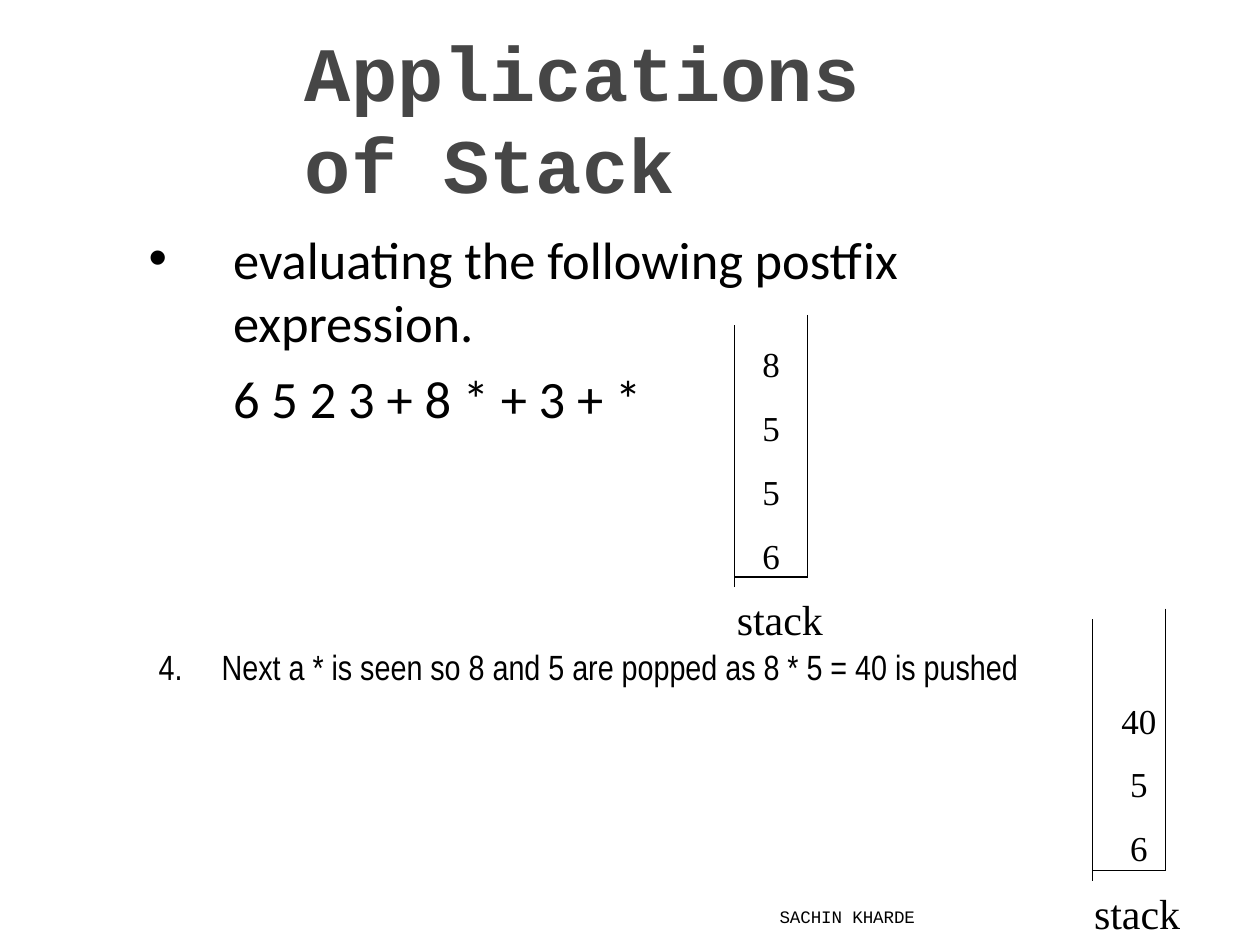
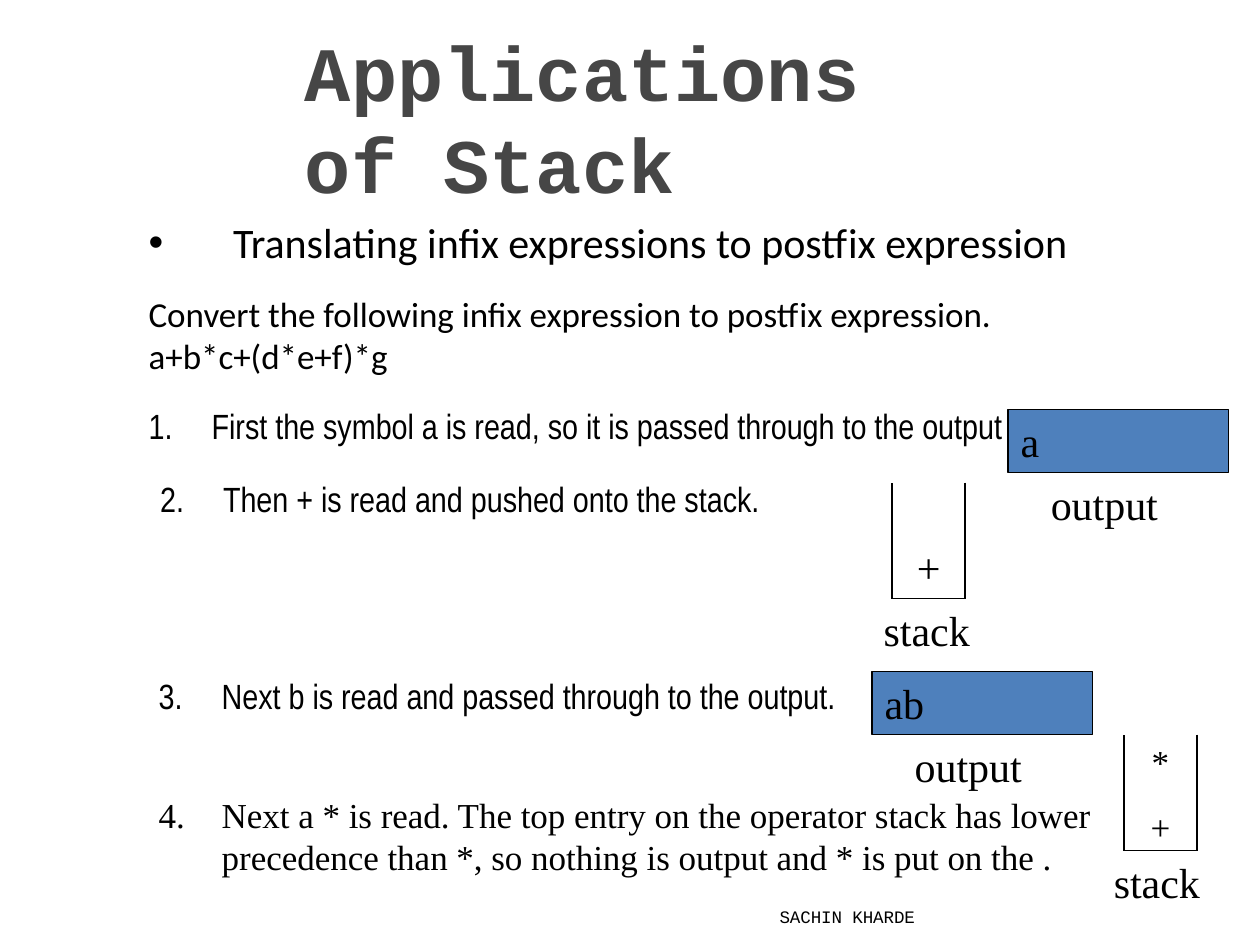
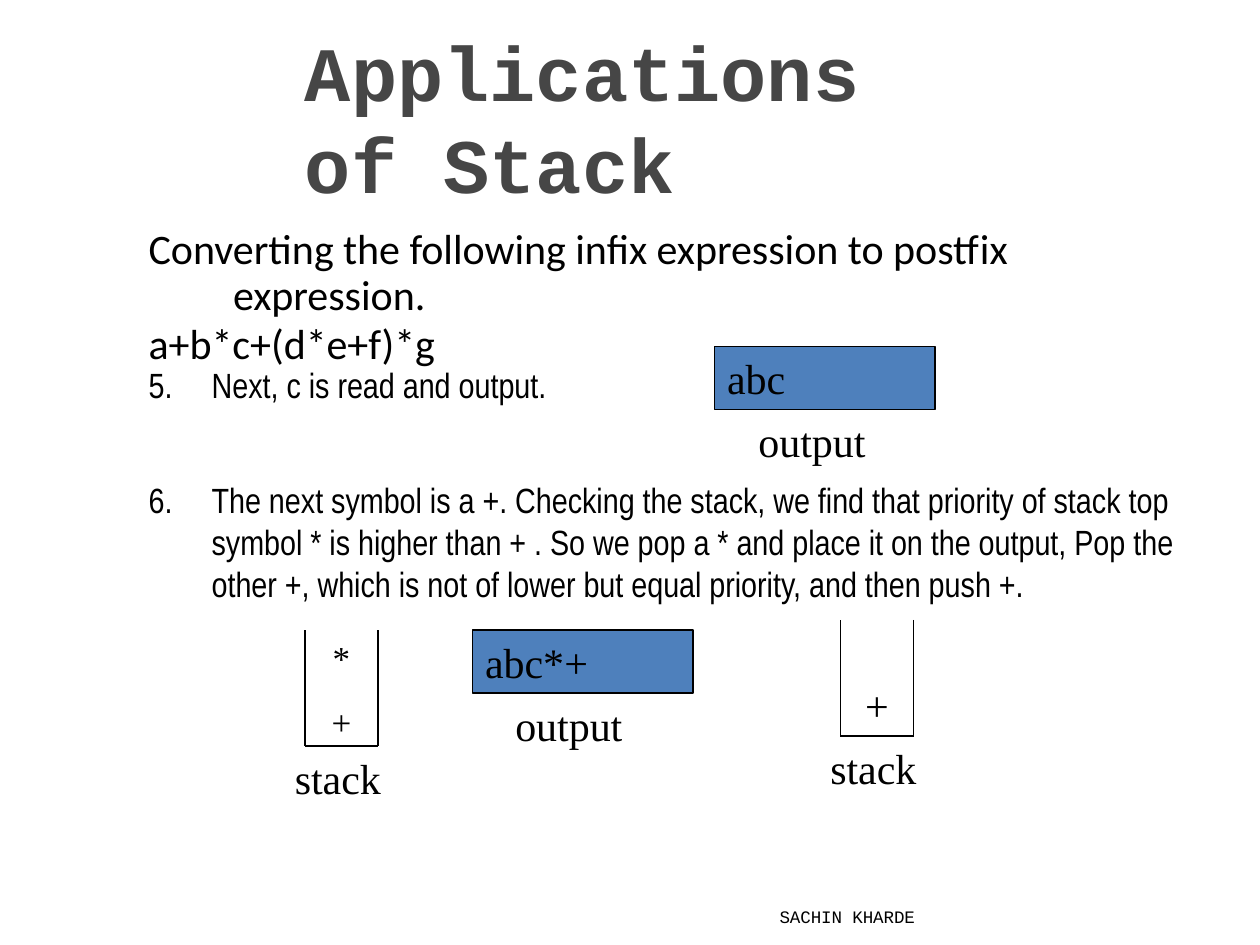
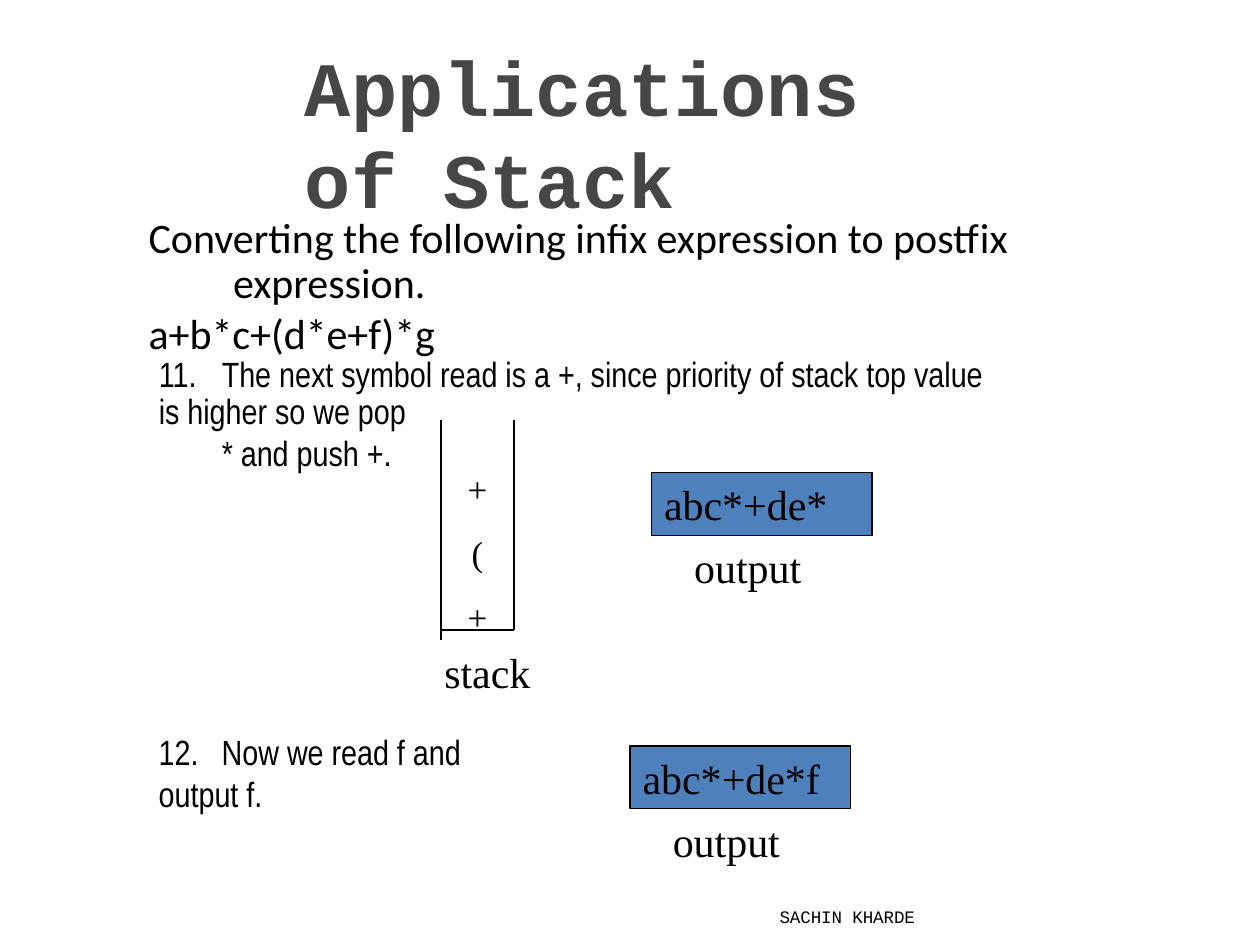
from dataclasses import dataclass
from typing import Optional

from lxml import etree
from pptx import Presentation
from pptx.dml.color import RGBColor
from pptx.enum.shapes import MSO_SHAPE
from pptx.enum.text import MSO_ANCHOR, MSO_AUTO_SIZE, PP_ALIGN
from pptx.oxml.ns import qn
from pptx.slide import Slide
from pptx.text.text import TextFrame
from pptx.util import Inches, Pt

LEFT, CENTER, RIGHT = PP_ALIGN.LEFT, PP_ALIGN.CENTER, PP_ALIGN.RIGHT
TOP, MIDDLE, BOTTOM = MSO_ANCHOR.TOP, MSO_ANCHOR.MIDDLE, MSO_ANCHOR.BOTTOM
FIT_SHAPE, FIXED_SIZE = MSO_AUTO_SIZE.SHAPE_TO_FIT_TEXT, MSO_AUTO_SIZE.NONE
RECTANGLE = MSO_SHAPE.RECTANGLE


@dataclass(frozen=True)
class Theme:
    ink: RGBColor = RGBColor(0x00, 0x00, 0x00)
    title: RGBColor = RGBColor(0x46, 0x46, 0x46)
    output: RGBColor = RGBColor(0x4E, 0x80, 0xBC)
    mono: str = "Courier New"
    body: str = "Calibri"
    step: str = "Arial Narrow"
    diagram: str = "Times New Roman"
    bullet: str = "Arial"
    title_size: float = 44
    lead_size: float = 30
    large: float = 24
    small: float = 20
    footer_size: float = 10
    line_width: float = 0.75
    tracking: int = -3


THEME = Theme()
EXPRESSION = "a+b*c+(d*e+f)*g"
CONVERTING = "Converting the following infix expression to postfix expression."


@dataclass(frozen=True)
class Box:
    left: float
    top: float
    width: float
    height: float


@dataclass(frozen=True)
class Stack:
    left: float
    top: float
    depth: float
    wall_start: float = 0
    wall_overhang: float = 0
    symbols: tuple[str, ...] = ()
    rise: float = 0.37
    size: float = THEME.small
    caption: bool = False


@dataclass(frozen=True)
class Output:
    left: float
    top: float
    text: str
    caption: bool = True


STACK_WIDTH = 0.58
SYMBOL_PITCH = 0.51
OUTPUT_WIDTH, OUTPUT_HEIGHT = 1.75, 0.5


def add_paragraph(frame: TextFrame, text: str, *, font: str = THEME.step,
                  size: float = THEME.small, color: RGBColor = THEME.ink,
                  bold: bool = False, align: PP_ALIGN = LEFT,
                  indent: float = 0.01, hanging: float = 0, right: float = 0,
                  before: float = 0, line: Optional[float] = None,
                  tab: Optional[float] = None, number: Optional[int] = None) -> None:
    first = frame.paragraphs[0]
    paragraph = frame.add_paragraph() if first.runs else first
    paragraph.alignment = align
    paragraph.space_before = Pt(before)
    if line:
        paragraph.line_spacing = Pt(line)
    properties = paragraph._p.get_or_add_pPr()
    properties.set("marL", str(Inches(indent)))
    properties.set("indent", str(Inches(-hanging)))
    properties.set("marR", str(Inches(right)))
    if number:
        etree.SubElement(properties, qn("a:buAutoNum"),
                         type="arabicPeriod", startAt=str(number))
    if tab:
        stops = etree.SubElement(properties, qn("a:tabLst"))
        etree.SubElement(stops, qn("a:tab"), pos=str(Inches(tab)), algn="l")
    run = paragraph.add_run()
    run.text = text
    run.font.name = font
    run.font.size = Pt(size)
    run.font.bold = bold
    run.font.color.rgb = color
    run._r.get_or_add_rPr().set("spc", str(THEME.tracking))


def set_frame(frame: TextFrame, inset: float, anchor: MSO_ANCHOR = TOP) -> None:
    frame.word_wrap = True
    frame.auto_size = FIT_SHAPE
    frame.vertical_anchor = anchor
    frame.margin_left = frame.margin_right = frame.margin_bottom = 0
    frame.margin_top = Inches(inset)


def add_text(slide: Slide, box: Box, text: str, *, inset: float = 0.01,
             anchor: MSO_ANCHOR = TOP, **text_format) -> TextFrame:
    frame = slide.shapes.add_textbox(Inches(box.left), Inches(box.top),
                                     Inches(box.width), Inches(box.height)).text_frame
    set_frame(frame, inset, anchor)
    add_paragraph(frame, text, **text_format)
    return frame


def add_diagram_text(slide: Slide, box: Box, text: str, **text_format) -> TextFrame:
    return add_text(slide, box, text,
                    **{"font": THEME.diagram, "size": THEME.large, **text_format})


def draw_stack(slide: Slide, stack: Stack) -> None:
    left, top = stack.left, stack.top
    right, bottom = left + STACK_WIDTH, top + stack.depth
    builder = slide.shapes.build_freeform(Inches(left), Inches(bottom))
    builder.add_line_segments([(Inches(right), Inches(bottom))], close=False)
    for x, start, end in ((right, top, bottom),
                          (left, bottom + stack.wall_overhang, top + stack.wall_start)):
        builder.move_to(Inches(x), Inches(start))
        builder.add_line_segments([(Inches(x), Inches(end))], close=False)
    walls = builder.convert_to_shape()
    walls.shadow.inherit = False
    walls.fill.background()
    walls.line.color.rgb = THEME.ink
    walls.line.width = Pt(THEME.line_width)

    symbol_width = 0.16 if stack.size == THEME.small else 0.22
    symbol_left = left + (STACK_WIDTH - symbol_width) / 2
    for level, symbol in enumerate(stack.symbols):
        symbol_top = bottom - stack.rise - level * SYMBOL_PITCH
        add_diagram_text(slide, Box(symbol_left, symbol_top, symbol_width, 0.36),
                         symbol, size=stack.size, align=CENTER, indent=0)
    if stack.caption:
        add_diagram_text(slide, Box(left - 0.09, bottom + 0.04, 0.71, 0.43), "stack")


def draw_output(slide: Slide, output: Output) -> None:
    band = slide.shapes.add_shape(RECTANGLE, Inches(output.left), Inches(output.top),
                                  Inches(OUTPUT_WIDTH), Inches(OUTPUT_HEIGHT))
    band.shadow.inherit = False
    band.fill.solid()
    band.fill.fore_color.rgb = THEME.output
    band.line.color.rgb = THEME.ink
    band.line.width = Pt(THEME.line_width)
    set_frame(band.text_frame, 0.05)
    add_paragraph(band.text_frame, output.text, font=THEME.diagram,
                  size=THEME.large, indent=0.1)
    if output.caption:
        add_diagram_text(slide, Box(output.left + 0.33, output.top + 0.54, 0.88, 0.43),
                         "output")


def start_slide(deck: Presentation, title_top: float = 0.54) -> Slide:
    slide = deck.slides.add_slide(deck.slide_layouts[6])
    add_text(slide, Box(2.41, title_top, 5.18, 0.76), "Applications of Stack",
             anchor=MIDDLE, font=THEME.mono, size=THEME.title_size,
             color=THEME.title, bold=True)
    footer = add_text(slide, Box(4.79, 7.01, 2.57, 0.4), "SACHIN KHARDE",
                      anchor=BOTTOM, font=THEME.mono, size=THEME.footer_size,
                      align=RIGHT, indent=0)
    footer.auto_size = FIXED_SIZE
    footer.margin_left = footer.margin_right = Inches(0.1)
    footer.margin_top = footer.margin_bottom = Inches(0.05)
    return slide


def add_lead(slide: Slide, box: Box, bullet_box: Box, text: str, size: float) -> None:
    add_text(slide, bullet_box, "•", font=THEME.bullet, size=size)
    add_text(slide, box, text, font=THEME.body, size=size)


def add_converting(slide: Slide, box: Box, right: float = 0) -> TextFrame:
    return add_text(slide, box, CONVERTING, inset=0.06, font=THEME.body,
                    size=THEME.large, indent=0.68, hanging=0.67, line=25.9, right=right)


def build_evaluation(deck: Presentation) -> None:
    slide = start_slide(deck)
    add_lead(slide, Box(1.84, 1.79, 5.34, 0.53), Box(1.17, 1.76, 0.17, 0.53),
             "evaluating the following postfix", THEME.lead_size)
    postfix = add_text(slide, Box(1.84, 2.18, 3.28, 1.24), "expression.", inset=0.12,
                       font=THEME.body, size=THEME.lead_size)
    add_paragraph(postfix, "6 5 2 3 + 8 * + 3 + *", font=THEME.body,
                  size=THEME.lead_size, before=7.5)

    for left, top in ((8.67, 4.83), (5.83, 2.5)):
        draw_stack(slide, Stack(left, top, 2.08, wall_start=0.08, wall_overhang=0.08))

    multiply = add_diagram_text(slide, Box(1.25, 4.7, 8.13, 2.76), "stack",
                                align=CENTER, indent=1.75)
    add_paragraph(multiply, "4.\tNext a * is seen so 8 and 5 are popped as 8 * 5 = 40 is pushed",
                  before=1.2, tab=0.51)
    for value, before in (("40", 6.5), ("5", 12.4), ("6", 12.5)):
        add_paragraph(multiply, value, font=THEME.diagram, align=CENTER,
                      indent=7.45, before=before)
    add_paragraph(multiply, "stack", font=THEME.diagram, size=THEME.large,
                  align=CENTER, indent=7.42, before=10.6)

    values = add_diagram_text(slide, Box(6.04, 2.53, 0.17, 2.05), "8",
                              inset=0.19, size=THEME.small)
    for value in "556":
        add_paragraph(values, value, font=THEME.diagram, before=12.5)


def build_translation(deck: Presentation) -> None:
    slide = start_slide(deck)
    add_lead(slide, Box(1.84, 1.71, 6.72, 0.43), Box(1.17, 1.69, 0.15, 0.43),
             "Translating infix expressions to postfix expression", THEME.large)
    add_text(slide, Box(1.17, 2.31, 6.76, 0.7),
             f"Convert the following infix expression to postfix expression. {EXPRESSION}",
             font=THEME.body)
    steps = add_text(slide, Box(1.17, 3.2, 6.81, 0.94),
                     "First the symbol a is read, so it is passed through to the output",
                     indent=0.51, hanging=0.5, number=1)
    add_paragraph(steps, "Then + is read and pushed onto the stack.",
                  indent=0.6, hanging=0.5, before=18, number=2)
    draw_output(slide, Output(8, 3.25, "a"))

    draw_stack(slide, Stack(7.08, 3.83, 0.92))
    pushed = add_diagram_text(slide, Box(7, 4.19, 0.71, 1.03), "+",
                              inset=0.11, align=CENTER, indent=0.03)
    add_paragraph(pushed, "stack", font=THEME.diagram, size=THEME.large,
                  align=CENTER, indent=0, before=7.2)

    precedence = add_diagram_text(slide, Box(1.25, 5.87, 7.46, 1.11), "output", indent=6.01)
    add_paragraph(precedence,
                  "4.\tNext a * is read. The top entry on the operator stack has lower "
                  "precedence than *, so nothing is output and * is put on the .",
                  font=THEME.diagram, indent=0.51, hanging=0.5, before=1.2, tab=0.51)
    add_text(slide, Box(1.25, 5.34, 5.4, 0.36),
             "3.\tNext b is read and passed through to the output.", tab=0.51)
    draw_output(slide, Output(6.92, 5.33, "ab", caption=False))
    draw_stack(slide, Stack(8.92, 5.83, 0.92, symbols=("+", "*"), caption=True))


def build_priority(deck: Presentation) -> None:
    slide = start_slide(deck)
    add_converting(slide, Box(1.17, 1.75, 6.89, 0.79))
    reading = add_text(slide, Box(1.17, 2.55, 3.19, 0.68), EXPRESSION,
                       font=THEME.body, size=THEME.large, line=26)
    add_paragraph(reading, "5.\tNext, c is read and output.", line=21.2, tab=0.51)

    draw_stack(slide, Stack(6.67, 4.92, 0.92, symbols=("+",), rise=0.46,
                            size=THEME.large, caption=True))
    draw_output(slide, Output(3.75, 5, "abc*+"))
    draw_stack(slide, Stack(2.42, 5, 0.92, symbols=("+", "*"), caption=True))
    draw_output(slide, Output(5.67, 2.75, "abc", caption=False))

    checking = add_diagram_text(slide, Box(1.17, 3.17, 8.23, 1.65), "output",
                                inset=0.13, indent=4.85)
    add_paragraph(checking,
                  "6.\tThe next symbol is a +. Checking the stack, we find that priority "
                  "of stack top symbol * is higher than + . So we pop a * and place it on "
                  "the output, Pop the other +, which is not of lower but equal priority, "
                  "and then push +.",
                  indent=0.51, hanging=0.5, before=7.2, tab=0.51)


def build_parenthesis(deck: Presentation) -> None:
    slide = start_slide(deck, title_top=0.66)
    popping = add_converting(slide, Box(1.17, 1.66, 8.69, 1.82), right=1.8)
    add_paragraph(popping, EXPRESSION, font=THEME.body, size=THEME.large,
                  before=2.8, line=26)
    add_paragraph(popping,
                  "11.\tThe next symbol read is a +, since priority of stack top value "
                  "is higher so we pop",
                  indent=0.09, right=1.9, line=21.2, tab=0.68)
    add_paragraph(popping, "* and push +.", indent=0.59)

    draw_output(slide, Output(5.17, 3.75, "abc*+de*"))
    draw_stack(slide, Stack(3.5, 3.33, 1.67, wall_overhang=0.08,
                            symbols=("+", "(", "+"), rise=0.28))
    reading = add_diagram_text(slide, Box(1.25, 5.12, 3.31, 1.03), "stack",
                               align=RIGHT, indent=0, right=0.35)
    add_paragraph(reading, "12.\tNow we read f and output f.",
                  right=0.6, before=19.2, tab=0.51)
    draw_output(slide, Output(5, 5.92, "abc*+de*f"))


def main() -> None:
    deck = Presentation()
    deck.slide_width, deck.slide_height = Inches(10), Inches(7.5)
    for build in (build_evaluation, build_translation, build_priority, build_parenthesis):
        build(deck)
    deck.save("out.pptx")


if __name__ == "__main__":
    main()
